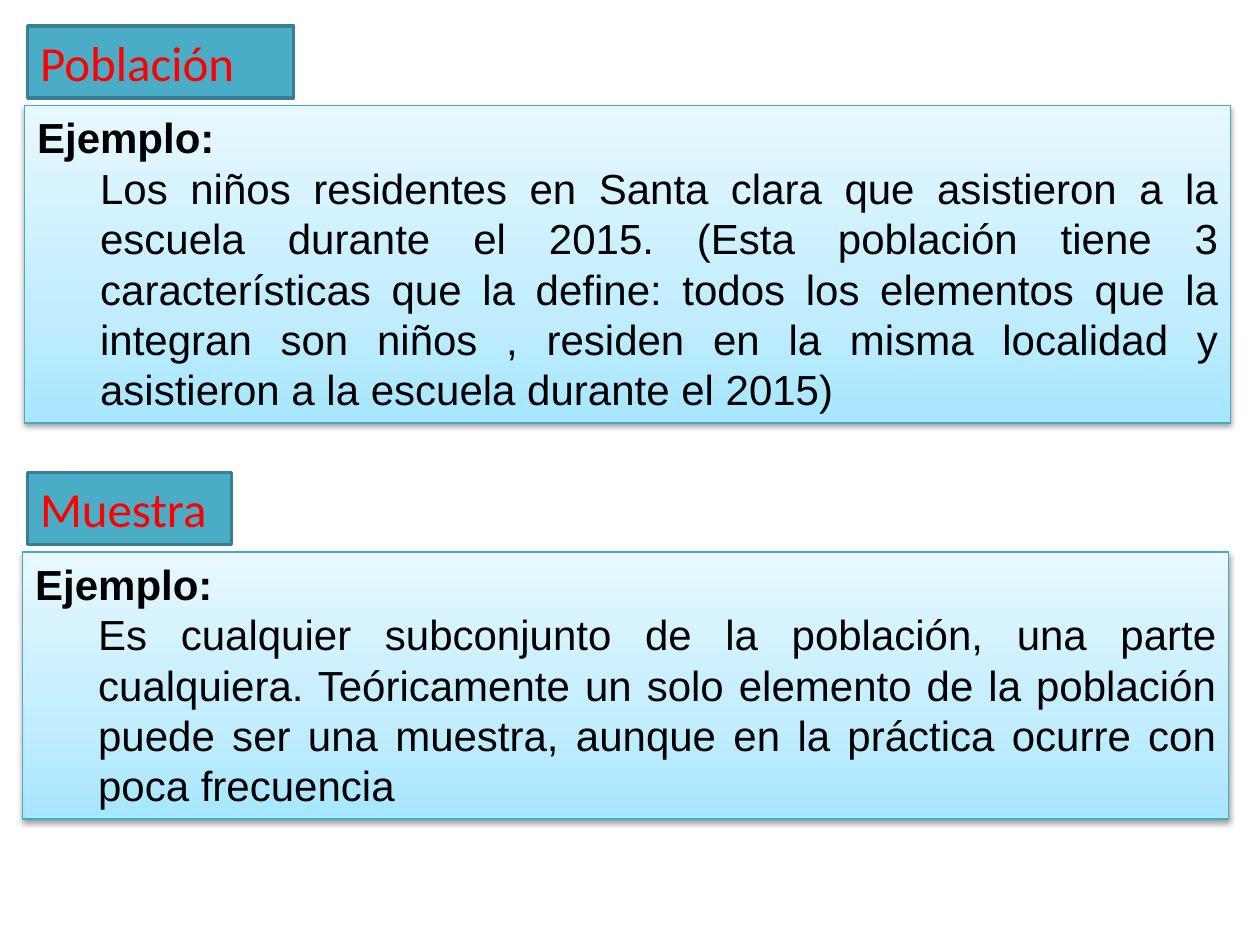
import copy

import pptx
import pptx.dml.color
import pptx.enum.shapes
import pptx.enum.text
import pptx.oxml
import pptx.oxml.ns
import pptx.util

Cm = pptx.util.Cm
Pt = pptx.util.Pt
RGBColor = pptx.dml.color.RGBColor
Align = pptx.enum.text.PP_ALIGN

BLACK = RGBColor(0x00, 0x00, 0x00)
RED = RGBColor(0xFF, 0x00, 0x00)
TEAL = RGBColor(0x4B, 0xAC, 0xC6)
DARK_TEAL = RGBColor(0x37, 0x7F, 0x92)
EDGE_TEAL = RGBColor(0x46, 0xAA, 0xC5)
SKY_STOPS = (
    (0, RGBColor(0xA7, 0xE6, 0xFF)),
    (0.35, RGBColor(0xC1, 0xED, 0xFF)),
    (1, RGBColor(0xE7, 0xF8, 0xFF)),
)
SHADOW = (
    '<a:outerShdw %s blurRad="40000" dist="20000" dir="5400000" rotWithShape="0">'
    '<a:srgbClr val="000000"><a:alpha val="38000"/></a:srgbClr></a:outerShdw>'
    % pptx.oxml.ns.nsdecls("a")
)

SECTIONS = (
    dict(
        title="Población", title_at=(0.56, 0.53, 5.36, 1.45),
        body_at=(0.5, 2.13, 24.31, 6.4),
        body="Los niños residentes en Santa clara que asistieron a la escuela "
             "durante el 2015. (Esta población tiene 3 características que la "
             "define: todos los elementos que la integran son niños , residen en "
             "la misma localidad y asistieron a la escuela durante el 2015)",
    ),
    dict(
        title="Muestra", title_at=(0.56, 9.53, 4.11, 1.45),
        body_at=(0.46, 11.13, 24.31, 5.38),
        body="Es cualquier subconjunto de la población, una parte cualquiera. "
             "Teóricamente un solo elemento de la población puede ser una "
             "muestra, aunque en la práctica ocurre con poca frecuencia",
    ),
)


def write(para, text, font="Arial", size=24, color=BLACK, bold=False,
          align=Align.LEFT, margin=0, indent=0, spacing=None):
    para.alignment = align
    if spacing:
        para.line_spacing = Pt(spacing)
    properties = para._p.get_or_add_pPr()
    properties.set("marL", str(Cm(margin)))
    properties.set("indent", str(Cm(indent)))
    span = para.add_run()
    span.text = text
    span.font.name = font
    span.font.size = Pt(size)
    span.font.bold = bold
    span.font.color.rgb = color


class Painter:
    body_style = dict(align=Align.JUSTIFY, margin=1.27, spacing=28.8)
    title_style = dict(font="Calibri", size=28, color=RED)

    def __init__(self, page):
        self.page = page

    def box(self, place, edge, width):
        box = self.page.shapes.add_shape(
            pptx.enum.shapes.MSO_SHAPE.RECTANGLE, *(Cm(value) for value in place))
        box.shadow.inherit = False
        box.line.color.rgb = edge
        box.line.width = Pt(width)
        box.text_frame.word_wrap = True
        box.text_frame.vertical_anchor = pptx.enum.text.MSO_ANCHOR.TOP
        return box

    def title(self, text, place):
        box = self.box(place, DARK_TEAL, 2)
        box.fill.solid()
        box.fill.fore_color.rgb = TEAL
        write(box.text_frame.paragraphs[0], text, **self.title_style)

    def example(self, text, place):
        box = self.box(place, EDGE_TEAL, 0.75)
        self.shade(box)
        frame = box.text_frame
        write(frame.paragraphs[0], "Ejemplo:", bold=True, indent=-1.27,
              **self.body_style)
        write(frame.add_paragraph(), text, **self.body_style)

    def shade(self, box):
        box.fill.gradient()
        box.fill.gradient_angle = 90
        properties = box._element.spPr
        stops = properties.find(".//" + pptx.oxml.ns.qn("a:gsLst"))
        stops.append(copy.deepcopy(stops[0]))
        for stop, (position, color) in zip(box.fill.gradient_stops, SKY_STOPS):
            stop.position = position
            stop.color.rgb = color
        effects = properties.find(pptx.oxml.ns.qn("a:effectLst"))
        effects.append(pptx.oxml.parse_xml(SHADOW))


def main():
    deck = pptx.Presentation()
    deck.slide_width = Cm(25.4)
    deck.slide_height = Cm(19.05)
    painter = Painter(deck.slides.add_slide(deck.slide_layouts[6]))
    for section in SECTIONS:
        painter.example(section["body"], section["body_at"])
        painter.title(section["title"], section["title_at"])
    deck.save("out.pptx")


if __name__ == "__main__":
    main()
